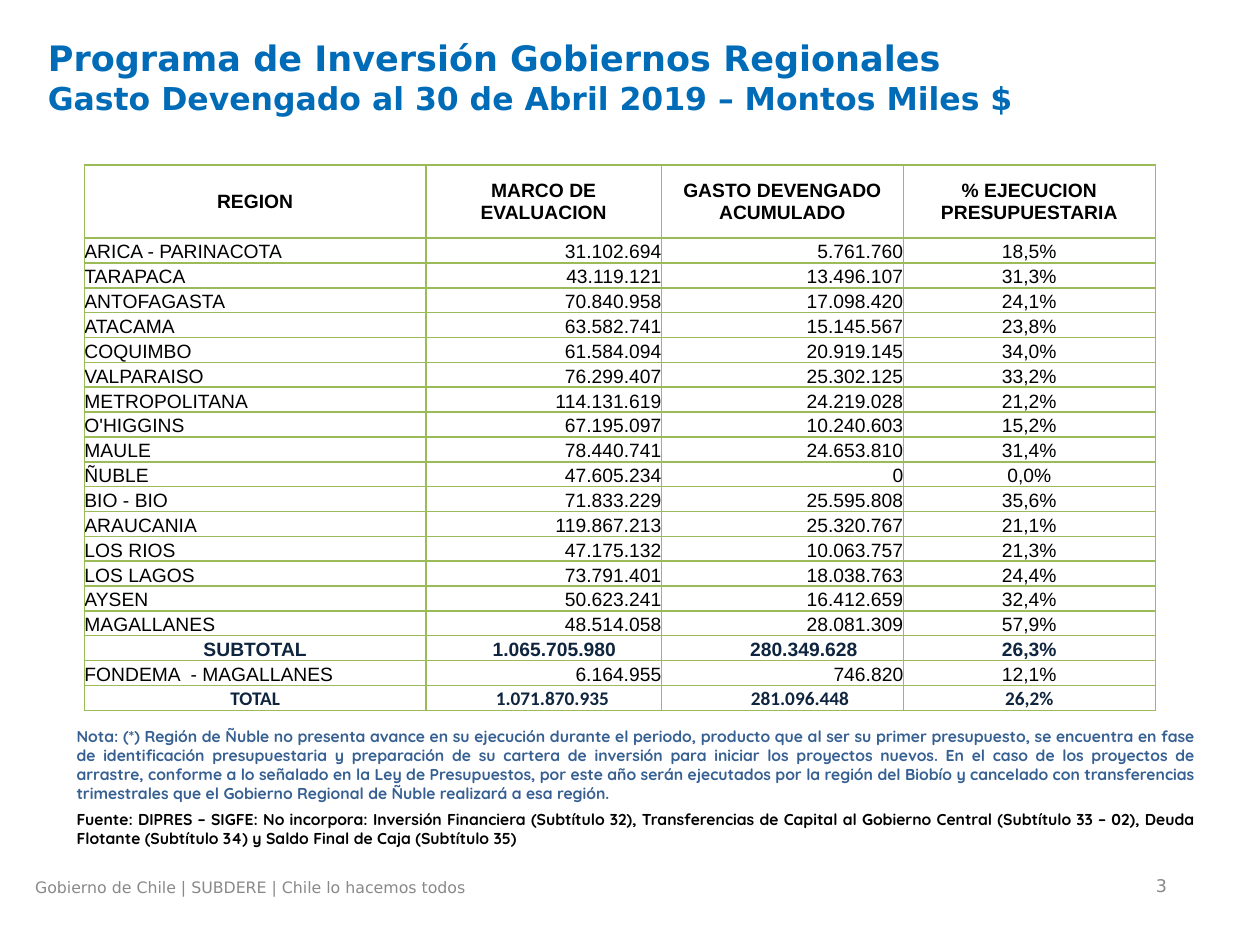
from typing import NamedTuple

from lxml.etree import SubElement
from pptx import Presentation
from pptx.dml.color import RGBColor
from pptx.enum.text import MSO_ANCHOR as Anchor, MSO_AUTO_SIZE as AutoSize, PP_ALIGN as Align
from pptx.oxml.ns import qn
from pptx.util import Inches, Pt

BLUE, NOTE_BLUE, NAVY = "006CB7", "376092", "0F243E"
GREEN, GRAY, BLACK = "9BBB59", "898989", "000000"
SANS = "DejaVu Sans"


class Style(NamedTuple):
    font: str
    size: float
    color: str
    bold: bool = False
    align: Align = Align.LEFT


class RowLook(NamedTuple):
    style: Style
    aligns: tuple[Align, ...]
    anchor: Anchor = Anchor.BOTTOM
    indents: tuple[float, ...] = (0, 0, 0, 0)


class TextBox(NamedTuple):
    left: float
    top: float
    width: float
    height: float
    paragraphs: list[tuple[str, Style]]
    anchor: Anchor = Anchor.TOP
    auto_size: AutoSize = AutoSize.NONE


CENTERED = (Align.CENTER,) * 4
HEADER = RowLook(Style("Arial", 11, BLACK, True), CENTERED, Anchor.MIDDLE)
REGION = RowLook(Style("Arial", 11, BLACK),
                 (Align.LEFT, Align.RIGHT, Align.RIGHT, Align.CENTER))
SUBTOTAL = RowLook(Style("Arial", 11, NAVY, True), CENTERED, indents=(0, 0.17, 0.34, 0))
TOTAL = RowLook(Style("Calibri", 11, NAVY, True), CENTERED, indents=(0, 0.14, 0.28, 0))

COLUMN_WIDTHS = (2.71, 1.87, 1.92, 2)
TABLE_HEIGHT, HEADER_HEIGHT = 4.33, 0.58
HEADINGS = ("REGION", "MARCO DE EVALUACION", "GASTO DEVENGADO ACUMULADO",
            "% EJECUCION PRESUPUESTARIA")
REGIONS = [
    ("ARICA - PARINACOTA", "31.102.694", "5.761.760", "18,5%"),
    ("TARAPACA", "43.119.121", "13.496.107", "31,3%"),
    ("ANTOFAGASTA", "70.840.958", "17.098.420", "24,1%"),
    ("ATACAMA", "63.582.741", "15.145.567", "23,8%"),
    ("COQUIMBO", "61.584.094", "20.919.145", "34,0%"),
    ("VALPARAISO", "76.299.407", "25.302.125", "33,2%"),
    ("METROPOLITANA", "114.131.619", "24.219.028", "21,2%"),
    ("O'HIGGINS", "67.195.097", "10.240.603", "15,2%"),
    ("MAULE", "78.440.741", "24.653.810", "31,4%"),
    ("ÑUBLE", "47.605.234", "0", "0,0%"),
    ("BIO - BIO", "71.833.229", "25.595.808", "35,6%"),
    ("ARAUCANIA", "119.867.213", "25.320.767", "21,1%"),
    ("LOS RIOS", "47.175.132", "10.063.757", "21,3%"),
    ("LOS LAGOS", "73.791.401", "18.038.763", "24,4%"),
    ("AYSEN", "50.623.241", "16.412.659", "32,4%"),
    ("MAGALLANES", "48.514.058", "28.081.309", "57,9%"),
]
ROWS = [
    (HEADINGS, HEADER),
    *((region, REGION) for region in REGIONS),
    (("SUBTOTAL", "1.065.705.980", "280.349.628", "26,3%"), SUBTOTAL),
    (("FONDEMA  - MAGALLANES", "6.164.955", "746.820", "12,1%"), REGION),
    (("TOTAL", "1.071.870.935", "281.096.448", "26,2%"), TOTAL),
]

NOTE = (
    "Nota: (*) Región de Ñuble no presenta avance en su ejecución durante el periodo, "
    "producto que al ser su primer presupuesto, se encuentra en fase de identificación "
    "presupuestaria y preparación de su cartera de inversión para iniciar los proyectos "
    "nuevos. En el caso de los proyectos de arrastre, conforme a lo señalado en la Ley de "
    "Presupuestos, por este año serán ejecutados por la región del Biobío y cancelado con "
    "transferencias trimestrales que el Gobierno Regional de Ñuble realizará a esa región."
)
SOURCE = (
    "Fuente: DIPRES – SIGFE: No incorpora: Inversión Financiera (Subtítulo 32), "
    "Transferencias de Capital al Gobierno Central (Subtítulo 33 – 02), Deuda Flotante "
    "(Subtítulo 34) y Saldo Final de Caja (Subtítulo 35)"
)
TEXT_BOXES = [
    TextBox(7.03, 6.92, 2.33, 0.21,
            [("3", Style(SANS, 10, GRAY, align=Align.RIGHT))], Anchor.MIDDLE),
    TextBox(0.18, 6.92, 6.48, 0.27,
            [("Gobierno de Chile | SUBDERE | Chile lo hacemos todos", Style(SANS, 9, GRAY))]),
    TextBox(0.51, 5.72, 9.06, 1.09,
            [(NOTE, Style("Quicksand", 9, NOTE_BLUE, True, Align.JUSTIFY)),
             (SOURCE, Style("Quicksand", 9, BLACK, True, Align.JUSTIFY))],
            auto_size=AutoSize.SHAPE_TO_FIT_TEXT),
]


def rgb(color: str) -> RGBColor:
    return RGBColor.from_string(color)


def style_paragraph(paragraph, style: Style) -> None:
    paragraph.alignment = style.align
    font = paragraph.font
    font.name, font.size, font.bold = style.font, Pt(style.size), style.bold
    font.color.rgb = rgb(style.color)


def add_title(slide) -> None:
    title = slide.shapes.title
    title.left, title.top = Inches(0.28), Inches(0.24)
    title.width, title.height = Inches(8.7), Inches(0.94)
    frame = title.text_frame
    frame.vertical_anchor = Anchor.TOP
    frame.auto_size = AutoSize.NONE
    frame.text = ("Programa de Inversión Gobiernos Regionales\v"
                  "Gasto Devengado al 30 de Abril 2019 – Montos Miles $")
    heading = frame.paragraphs[0]
    style_paragraph(heading, Style(SANS, 20, BLUE, True))
    heading.runs[1].font.size = Pt(18)


def add_text_box(slide, box: TextBox) -> None:
    frame = slide.shapes.add_textbox(*map(Inches, box[:4])).text_frame
    frame.word_wrap = True
    frame.auto_size = box.auto_size
    frame.vertical_anchor = box.anchor
    for index, (text, style) in enumerate(box.paragraphs):
        paragraph = frame.add_paragraph() if index else frame.paragraphs[0]
        paragraph.text = text
        if index:
            paragraph.space_before = Pt(4)
        style_paragraph(paragraph, style)


def add_borders(cell) -> None:
    properties = cell._tc.get_or_add_tcPr()
    for side in ("a:lnL", "a:lnR", "a:lnT", "a:lnB"):
        line = SubElement(properties, qn(side), w=str(Pt(1)))
        fill = SubElement(line, qn("a:solidFill"))
        SubElement(fill, qn("a:srgbClr"), val=GREEN)


def fill_cell(cell, text: str, look: RowLook, column: int) -> None:
    cell.margin_left = Inches(look.indents[column])
    cell.margin_right = cell.margin_top = cell.margin_bottom = 0
    cell.vertical_anchor = look.anchor
    add_borders(cell)
    cell.fill.background()
    cell.text = text
    style_paragraph(cell.text_frame.paragraphs[0],
                    look.style._replace(align=look.aligns[column]))


def add_budget_table(slide) -> None:
    table = slide.shapes.add_table(
        len(ROWS), len(COLUMN_WIDTHS), Inches(0.67), Inches(1.31),
        Inches(sum(COLUMN_WIDTHS)), Inches(TABLE_HEIGHT)).table
    table.first_row = table.horz_banding = False
    for column, width in zip(table.columns, COLUMN_WIDTHS):
        column.width = Inches(width)
    body_height = (TABLE_HEIGHT - HEADER_HEIGHT) / (len(ROWS) - 1)
    for index, (values, look) in enumerate(ROWS):
        table.rows[index].height = Inches(body_height if index else HEADER_HEIGHT)
        for column, text in enumerate(values):
            fill_cell(table.cell(index, column), text, look, column)


def main() -> None:
    deck = Presentation()
    deck.slide_width, deck.slide_height = Inches(10), Inches(7.5)
    slide = deck.slides.add_slide(deck.slide_layouts[5])
    add_title(slide)
    for box in TEXT_BOXES:
        add_text_box(slide, box)
    add_budget_table(slide)
    deck.save("out.pptx")


if __name__ == "__main__":
    main()
